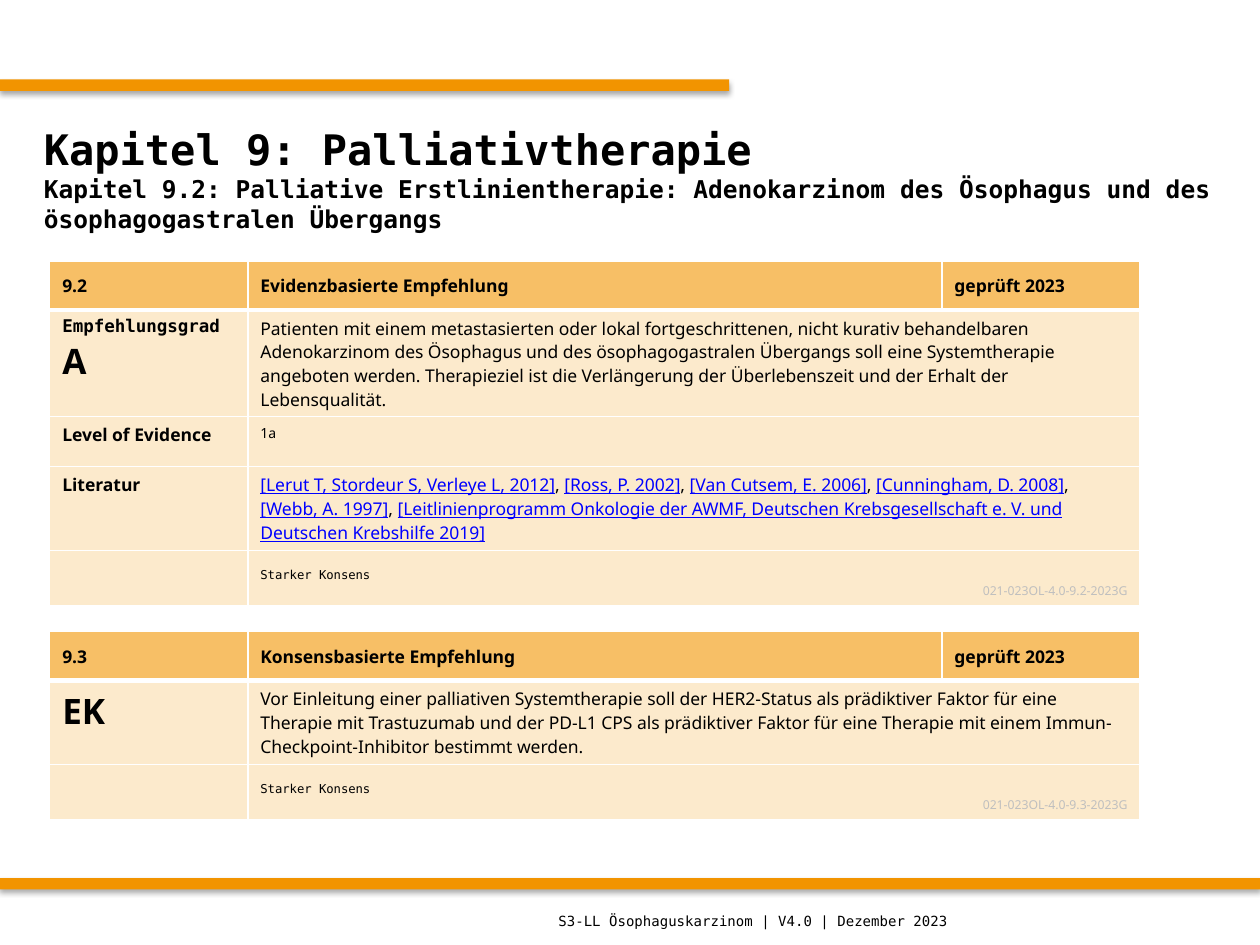
from lxml import etree
from pptx import Presentation
from pptx.dml.color import RGBColor
from pptx.enum.shapes import MSO_SHAPE
from pptx.enum.text import MSO_ANCHOR, PP_ALIGN
from pptx.oxml import parse_xml
from pptx.oxml.ns import nsdecls, qn
from pptx.util import Pt

RECT = MSO_SHAPE.RECTANGLE
TOP, MID, LOW = MSO_ANCHOR.TOP, MSO_ANCHOR.MIDDLE, MSO_ANCHOR.BOTTOM
LEFT, RIGHT = PP_ALIGN.LEFT, PP_ALIGN.RIGHT
MONO, SANS = "DejaVu Sans Mono", "Noto Sans"

BLACK = RGBColor(0x00, 0x00, 0x00)
GREY = RGBColor(0xBF, 0xBF, 0xBF)
BLUE = RGBColor(0x00, 0x00, 0xFF)
ORANGE = RGBColor(0xF2, 0x94, 0x00)
AMBER = RGBColor(0xF7, 0xBF, 0x66)
CREAM = RGBColor(0xFC, 0xEA, 0xCC)


def write(frame, lines):
    """Each line is (alignment, runs); a run is (text, size, font, bold, color)."""
    frame.word_wrap = True
    for i, (align, runs) in enumerate(lines):
        para = frame.paragraphs[0] if i == 0 else frame.add_paragraph()
        para.alignment = align
        for text, size, face, bold, color in runs:
            run = para.add_run()
            run.text = text
            font = run.font
            font.size, font.name, font.bold = Pt(size), face, bold
            font.color.rgb = color
            font.underline = color == BLUE


def style(cell, fill, top, low):
    """Fill a cell and give it white borders of the given widths."""
    cell.fill.solid()
    cell.fill.fore_color.rgb = fill
    props = cell._tc.get_or_add_tcPr()
    sides = (("lnL", 1), ("lnR", 1), ("lnT", top), ("lnB", low))
    for i, (tag, width) in enumerate(sides):
        props.insert(i, parse_xml(
            f'<a:{tag} {nsdecls("a")} w="{Pt(width)}"><a:solidFill>'
            f'<a:srgbClr val="FFFFFF"/></a:solidFill></a:{tag}>'))


deck = Presentation()
deck.slide_width, deck.slide_height = Pt(720), Pt(540)
slide = deck.slides.add_slide(deck.slide_layouts[6])
shapes = slide.shapes

# Orange bars with a soft shadow
for y, width in ((45.4, 416.7), (501.8, 720)):
    bar = shapes.add_shape(RECT, 0, Pt(y), Pt(width), Pt(6.5))
    bar.fill.solid()
    bar.fill.fore_color.rgb = ORANGE
    bar.line.fill.background()
    bar.shadow.inherit = False
    glow = bar._element.spPr.find(qn("a:effectLst"))
    outer = etree.SubElement(glow, qn("a:outerShdw"), blurRad=str(Pt(3.1)),
                             dist=str(Pt(1.8)), dir="5400000", rotWithShape="0")
    tint = etree.SubElement(outer, qn("a:srgbClr"), val="000000")
    etree.SubElement(tint, qn("a:alpha"), val="35000")

# Title and footer
title = [
    (LEFT, [("Kapitel 9: Palliativtherapie", 24, MONO, True, BLACK)]),
    (LEFT, [("Kapitel 9.2: Palliative Erstlinientherapie: Adenokarzinom des "
             "Ösophagus und des ösophagogastralen Übergangs", 14, MONO, True, BLACK)]),
]
footer = [(LEFT, [("S3-LL Ösophaguskarzinom | V4.0 | Dezember 2023",
                   8, MONO, False, BLACK)])]
for x, y, w, h, lines in ((18, 60, 684, 84, title), (312, 512, 396.7, 28, footer)):
    frame = shapes.add_textbox(Pt(x), Pt(y), Pt(w), Pt(h)).text_frame
    frame.vertical_anchor = MID
    write(frame, lines)

# Literature references, joined by commas
cites = [
    "[Lerut T, Stordeur S, Verleye L, 2012]", "[Ross, P. 2002]",
    "[Van Cutsem, E. 2006]", "[Cunningham, D. 2008]", "[Webb, A. 1997]",
    "[Leitlinienprogramm Onkologie der AWMF, Deutschen Krebsgesellschaft e. V. "
    "und Deutschen Krebshilfe 2019]",
]
refs = []
for cite in cites:
    if refs:
        refs.append((", ", 10, SANS, False, BLACK))
    refs.append((cite, 10, SANS, False, BLUE))

# Body rows: height, left lines, right lines
first = [
    (61, [(LEFT, [("Empfehlungsgrad", 10, MONO, True, BLACK)]),
          (LEFT, [("A", 20, SANS, True, BLACK)])],
     [(LEFT, [("Patienten mit einem metastasierten oder lokal fortgeschrittenen, "
               "nicht kurativ behandelbaren Adenokarzinom des Ösophagus und des "
               "ösophagogastralen Übergangs soll eine Systemtherapie angeboten "
               "werden. Therapieziel ist die Verlängerung der Überlebenszeit und "
               "der Erhalt der Lebensqualität.", 10, SANS, False, BLACK)])]),
    (28.5, [(LEFT, [("Level of Evidence", 10, SANS, True, BLACK)])],
     [(LEFT, [("1a", 8, SANS, False, BLACK)])]),
    (48, [(LEFT, [("Literatur", 10, SANS, True, BLACK)])], [(LEFT, refs)]),
]
second = [
    (48, [(LEFT, [("EK", 20, SANS, True, BLACK)])],
     [(LEFT, [("Vor Einleitung einer palliativen Systemtherapie soll der "
               "HER2-Status als prädiktiver Faktor für eine Therapie mit "
               "Trastuzumab und der PD-L1 CPS als prädiktiver Faktor für eine "
               "Therapie mit einem Immun-Checkpoint-Inhibitor bestimmt werden.",
               10, SANS, False, BLACK)])]),
]

# Recommendation tables
for y, num, kind, body in ((149.2, "9.2", "Evidenzbasierte Empfehlung", first),
                           (361, "9.3", "Konsensbasierte Empfehlung", second)):
    close = [(LEFT, [("Starker Konsens", 7, MONO, False, BLACK)]),
             (RIGHT, [(f"021-023OL-4.0-{num}-2023G", 7, SANS, False, GREY)])]
    rows = body + [(31.4, [], close)]
    high = 28 + sum(row[0] for row in rows)
    grid = shapes.add_table(len(rows) + 1, 3, Pt(28.4), Pt(y), Pt(623), Pt(high)).table
    grid.first_row = grid.horz_banding = False
    for col, width in zip(grid.columns, (113.2, 396.6, 113.2)):
        col.width = Pt(width)

    # Header row
    grid.rows[0].height = Pt(28)
    for cell, text in zip(grid.rows[0].cells, (num, kind, "geprüft 2023")):
        style(cell, AMBER, 1, 3)
        cell.vertical_anchor = MID
        write(cell.text_frame, [(LEFT, [(text, 10, SANS, True, BLACK)])])

    # Body rows, right part merged over two columns
    for r, (height, label, lines) in enumerate(rows, 1):
        grid.rows[r].height = Pt(height)
        for cell in grid.rows[r].cells:
            style(cell, CREAM, 3 if r == 1 else 1, 1)
        grid.cell(r, 1).merge(grid.cell(r, 2))
        grid.cell(r, 1).vertical_anchor = LOW if lines is close else TOP
        write(grid.cell(r, 0).text_frame, label)
        write(grid.cell(r, 1).text_frame, lines)

deck.save("out.pptx")
